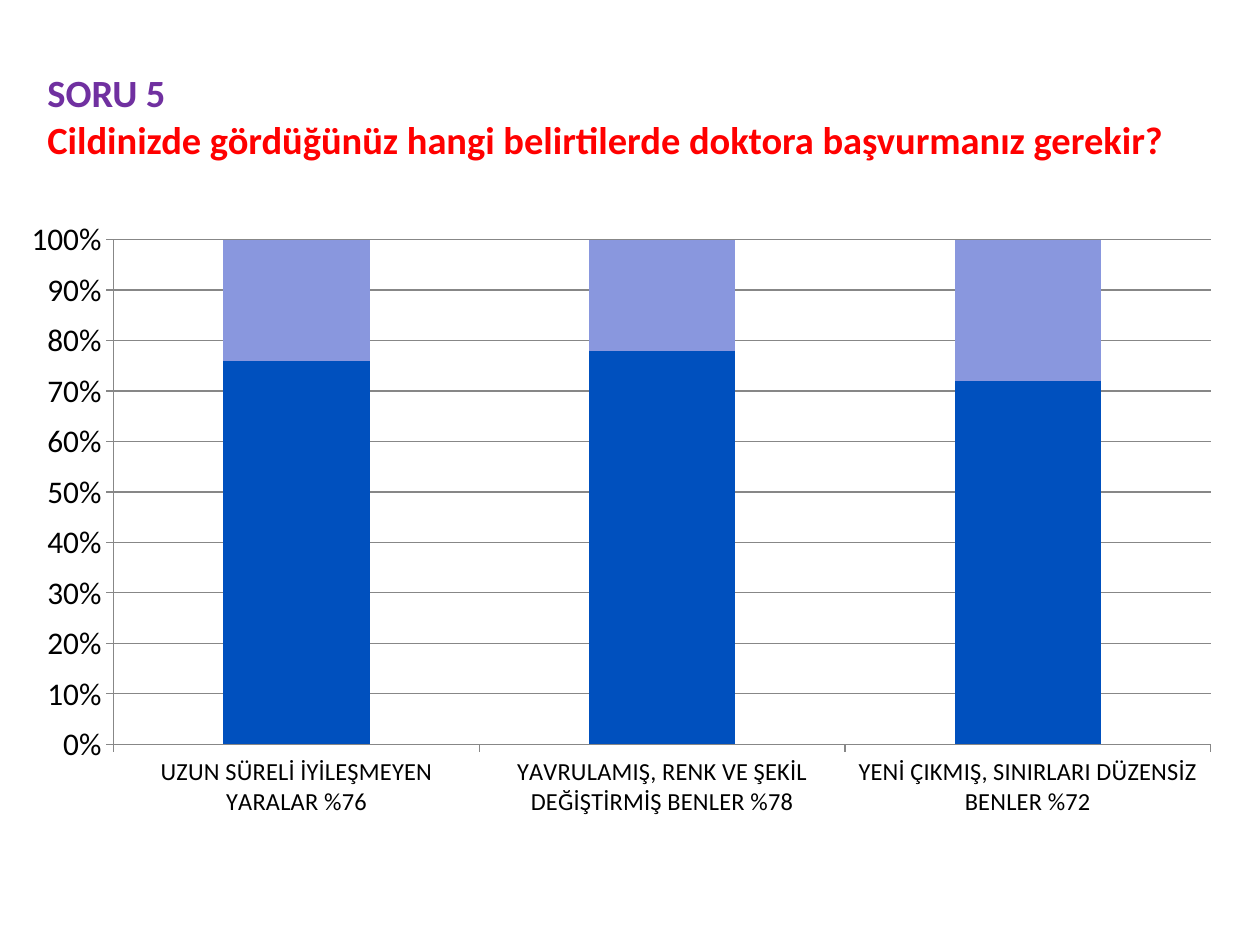
"""Build a slide with a question and a stacked column chart of its answers."""
from lxml import etree
from pptx import Presentation
from pptx.chart.data import CategoryChartData
from pptx.dml.color import RGBColor
from pptx.enum.chart import XL_CHART_TYPE, XL_TICK_MARK
from pptx.enum.text import MSO_ANCHOR
from pptx.oxml.ns import qn
from pptx.util import Pt

STACKED = XL_CHART_TYPE.COLUMN_STACKED_100
OUTSIDE = XL_TICK_MARK.OUTSIDE
MIDDLE = MSO_ANCHOR.MIDDLE
FONT = "Calibri"
GRAY = "878787"


def color(code):
    return RGBColor.from_string(code)


def style(font, size, code):
    font.name = FONT
    font.size = Pt(size)
    font.color.rgb = color(code)


deck = Presentation()
deck.slide_width, deck.slide_height = Pt(720), Pt(540)
slide = deck.slides.add_slide(deck.slide_layouts[6])

title = slide.shapes.add_textbox(Pt(20), Pt(21), Pt(720), Pt(90))
frame = title.text_frame
frame.word_wrap = True
frame.vertical_anchor = MIDDLE
frame.text = "SORU 5\nCildinizde gördüğünüz hangi belirtilerde doktora başvurmanız gerekir?"
for line, code in zip(frame.paragraphs, ("7030A0", "FF0000")):
    font = line.runs[0].font
    style(font, 22, code)
    font.bold = True

shares = {
    "UZUN SÜRELİ İYİLEŞMEYEN YARALAR %76": 76,
    "YAVRULAMIŞ, RENK VE ŞEKİL DEĞİŞTİRMİŞ BENLER %78": 78,
    "YENİ ÇIKMIŞ, SINIRLARI DÜZENSİZ BENLER %72": 72,
}
data = CategoryChartData()
data.categories = list(shares)
data.add_series("Series 1", list(shares.values()))
data.add_series("Series 2", [100 - share for share in shares.values()])

chart = slide.shapes.add_chart(
    STACKED, Pt(18), Pt(126), Pt(684), Pt(388.8), data
).chart
chart.has_legend = False
chart.has_title = False
style(chart.font, 18, "000000")

plot = chart.plots[0]
plot.gap_width = 150
plot.overlap = 100
plot.vary_by_categories = False
for series, code in zip(plot.series, ("0050BE", "8997DE")):
    series.format.fill.solid()
    series.format.fill.fore_color.rgb = color(code)

groups, values = chart.category_axis, chart.value_axis
values.has_major_gridlines = True
values.tick_labels.number_format = "0%"
values.tick_labels.number_format_is_linked = False
for axis, size in ((groups, 14), (values, 18)):
    axis.major_tick_mark = OUTSIDE
    style(axis.tick_labels.font, size, "000000")
for part in (groups, values, values.major_gridlines):
    part.format.line.color.rgb = color(GRAY)
    part.format.line.width = Pt(0.75)

area = chart.element.find(".//" + qn("c:plotArea"))
layout = area.find(qn("c:layout"))
if layout is None:
    layout = etree.Element(qn("c:layout"))
    area.insert(0, layout)
manual = etree.SubElement(layout, qn("c:manualLayout"))
places = (
    ("layoutTarget", "inner"), ("xMode", "edge"), ("yMode", "edge"),
    ("x", "0.063"), ("y", "0.028"), ("w", "0.922"), ("h", "0.742"),
)
for name, value in places:
    etree.SubElement(manual, qn("c:" + name)).set("val", value)

deck.save("out.pptx")
